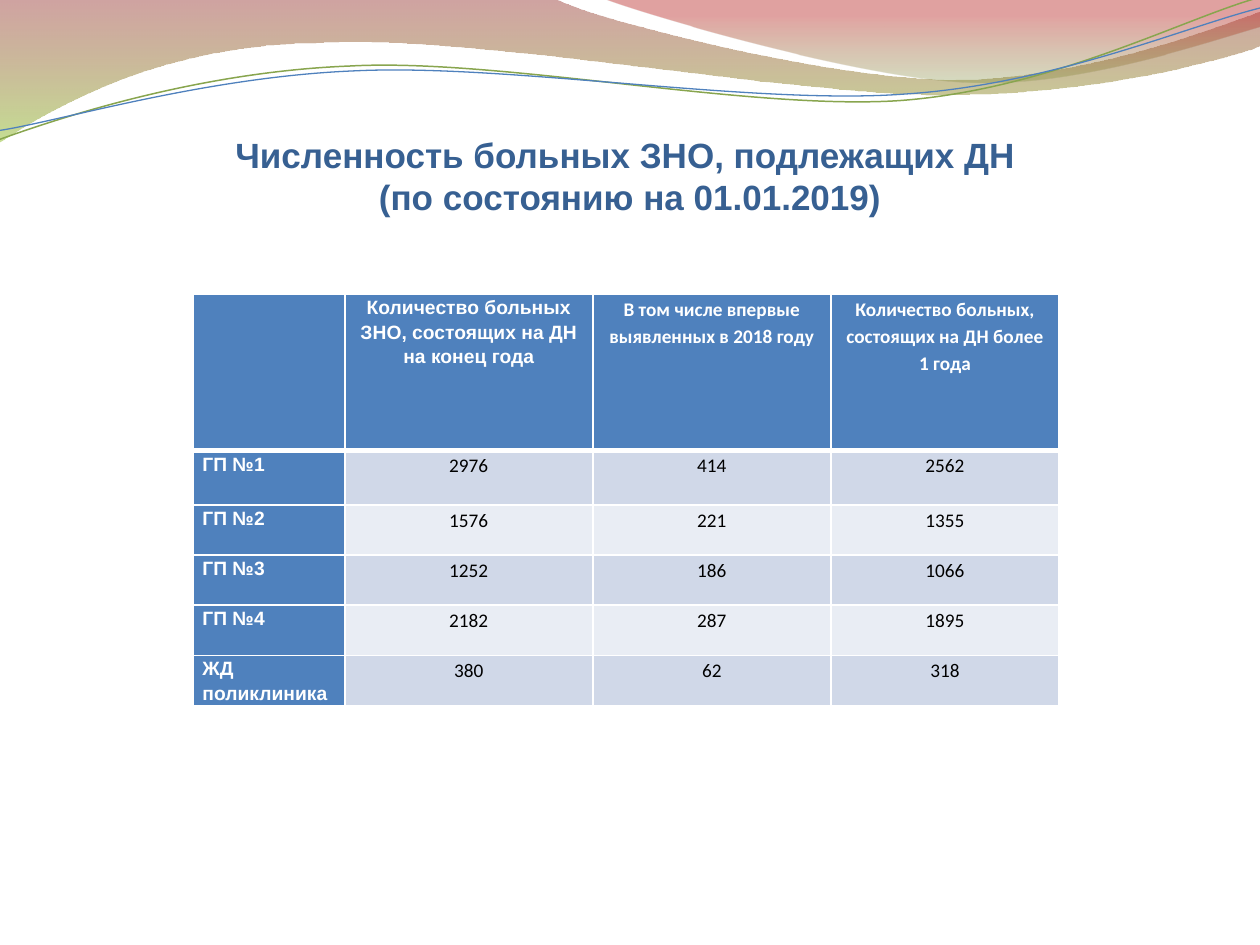
"""Build a slide with a table of registered patients by clinic under a wavy header."""
import math

from lxml import etree
from pptx import Presentation, util as u
from pptx.dml.color import RGBColor
from pptx.enum import text as t
from pptx.oxml.ns import qn

WHITE, BLUE = "FFFFFF", "4F81BD"


def color(value):
    return RGBColor.from_string(value)


def write(frame, content, size, font, fill, bold=True, align=t.PP_ALIGN.CENTER, spacing=1.0):
    frame.word_wrap = True
    frame.text = content
    paragraph = frame.paragraphs[0]
    paragraph.alignment = align
    paragraph.line_spacing = spacing
    for run in paragraph.runs:
        run.font.size = u.Pt(size)
        run.font.name = font
        run.font.bold = bold
        run.font.color.rgb = color(fill)


presentation = Presentation()
presentation.slide_width, presentation.slide_height = u.Cm(25.4), u.Cm(19.05)
slide = presentation.slides.add_slide(presentation.slide_layouts[5])
slide.background.fill.solid()
slide.background.fill.fore_color.rgb = color(WHITE)

wide_band = [
    [(0, -1)], [(440, -1)],
    [(476, 17), (663, 63), (758, 63)], [(853, 63), (958, 25), (1000, 9)],
    [(1001, 36)],
    [(983, 44), (870, 76), (746, 75)], [(622, 75), (382, 28), (257, 34)],
    [(129, 35), (46, 83), (-1, 113)],
]
right_band = [
    [(479, -1)], [(509, 11), (682, 62), (769, 65)],
    [(855, 69), (961, 32), (1000, 21)], [(1000, 0)],
]
green_wave = [
    [(0, 111)], [(48, 93), (158, 57), (277, 52)],
    [(395, 46), (593, 88), (713, 80)], [(833, 71), (938, 15), (998, -2)],
]
blue_wave = [
    [(0, 104)], [(47, 96), (164, 61), (283, 56)],
    [(403, 51), (597, 83), (717, 75)], [(836, 67), (941, 21), (1000, 6)],
]
waves = [
    (wide_band, (0, 0), 0, [(0, "973330", 45), (1, "95C238", 55)], None),
    (right_band, (0, 0), 0, [(0.2, "BE3330", 45), (1, "769537", 30)], None),
    (green_wave, (499, 57.5), 2.7, None, ("88A54E", 0.85)),
    (blue_wave, (500.5, 59), 2.7, None, (BLUE, 0.75)),
]
for segments, (center_x, center_y), tilt, gradient, stroke in waves:
    cosine, sine = math.cos(math.radians(tilt)), math.sin(math.radians(tilt))
    points = [(round(center_x + (x - center_x) * cosine - (y - center_y) * sine),
               round(center_y + (x - center_x) * sine + (y - center_y) * cosine))
              for segment in segments for x, y in segment]
    builder = slide.shapes.build_freeform(*points[0], scale=u.Cm(0.0254))
    builder.add_line_segments(points[1:], close=gradient is not None)
    shape = builder.convert_to_shape()
    shape.shadow.inherit = False
    shape.rotation = -tilt
    lines = iter(list(shape.element.iter(qn("a:lnTo"))))
    for segment in segments[1:]:
        group = [next(lines) for point in segment]
        if len(group) == 3:
            curve = etree.Element(qn("a:cubicBezTo"))
            group[0].addprevious(curve)
            for line in group:
                curve.append(line[0])
                line.getparent().remove(line)
    if gradient:
        shape.fill.gradient()
        shape.fill.gradient_angle = 270
        for stop, (position, value, opacity) in zip(shape.fill.gradient_stops, gradient):
            stop.position = position
            stop.color.rgb = color(value)
        for node, (position, value, opacity) in zip(shape.element.iter(qn("a:srgbClr")), gradient):
            etree.SubElement(node, qn("a:alpha"), val=str(opacity * 1000))
        shape.line.fill.background()
    else:
        shape.fill.background()
        shape.line.color.rgb = color(stroke[0])
        shape.line.width = u.Pt(stroke[1])

title = slide.shapes.title
slide.shapes.element.append(title.element)
title.left, title.top, title.width, title.height = u.Cm(1.27), u.Cm(1.57), u.Cm(22.86), u.Cm(3.94)
frame = title.text_frame
frame.margin_left = frame.margin_right = frame.margin_top = frame.margin_bottom = 0
frame.vertical_anchor = t.MSO_ANCHOR.MIDDLE
write(frame, "Численность больных ЗНО, подлежащих ДН \v(по состоянию на 01.01.2019)",
      20, "Arial", "376092")

rows = [
    ("", "Количество больных ЗНО, состоящих на ДН на конец года",
     "В том числе впервые выявленных в 2018 году",
     "Количество больных, состоящих на ДН более 1 года"),
    ("ГП №1", "2976", "414", "2562"),
    ("ГП №2", "1576", "221", "1355"),
    ("ГП №3", "1252", "186", "1066"),
    ("ГП №4", "2182", "287", "1895"),
    ("ЖД поликлиника", "380", "62", "318"),
]
widths = [3.05, 5, 4.8, 4.6]
heights = [3.15, 1.1] + [1.01] * 4
table = slide.shapes.add_table(len(rows), len(widths), u.Cm(3.9), u.Cm(5.93),
                               u.Cm(sum(widths)), u.Cm(sum(heights))).table
for column, width in zip(table.columns, widths):
    column.width = u.Cm(width)
for row, height in zip(table.rows, heights):
    row.height = u.Cm(height)

for r, values in enumerate(rows):
    for c, value in enumerate(values):
        cell = table.cell(r, c)
        heading = r == 0 or c == 0
        cell.margin_left = cell.margin_right = u.Cm(0.18)
        cell.margin_top = cell.margin_bottom = 0
        if value:
            write(cell.text_frame, value, 11,
                  "Arial" if c == 0 or (r, c) == (0, 1) else "Calibri",
                  WHITE if heading else "000000", bold=heading, spacing=1.15,
                  align=t.PP_ALIGN.LEFT if c == 0 else t.PP_ALIGN.CENTER)
        properties = cell._tc.get_or_add_tcPr()
        for side in "LRTB":
            thick = (r, side) in ((0, "B"), (1, "T"))
            border = etree.SubElement(properties, qn(f"a:ln{side}"), w=str(u.Pt(3 if thick else 1)))
            solid = etree.SubElement(border, qn("a:solidFill"))
            etree.SubElement(solid, qn("a:srgbClr"), val=WHITE)
        cell.fill.solid()
        cell.fill.fore_color.rgb = color(BLUE if heading else "D0D8E8" if r % 2 else "E9EDF4")

presentation.save("out.pptx")
